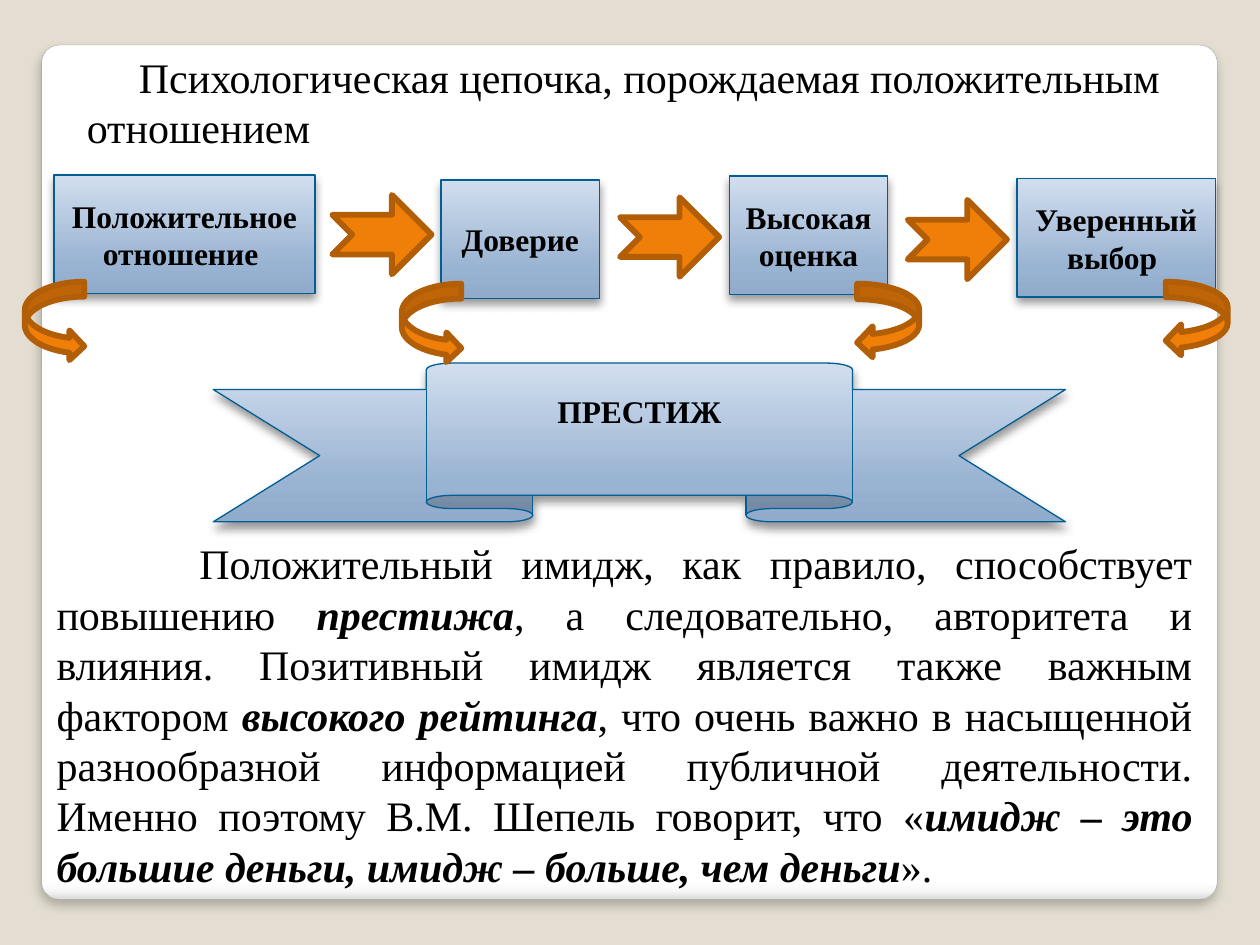
"""Build a slide on the chain that leads from a positive attitude to prestige."""
from pptx import Presentation
from pptx.dml.color import RGBColor
from pptx.enum.shapes import MSO_SHAPE as Shape
from pptx.enum.text import MSO_ANCHOR as Anchor, PP_ALIGN as Align
from pptx.oxml import parse_xml
from pptx.oxml.ns import nsdecls
from pptx.util import Cm, Pt

COLORS = {
    "page": "E3DED1", "panel_line": "A4A4A4", "text": "000000", "shadow": "000000",
    "blue_line": "035E94", "orange": "F07F09", "orange_line": "B25E07",
}
PANEL_STOPS = [(0, "FFFFFF"), (98, "FFFFFF"), (99, "F7F7F7"), (100, "DADADA")]
BLUE_STOPS = [(0, "90ABCB"), (25, "99B3D2"), (100, "D1DEEE")]
BLUE_STYLE = (BLUE_STOPS, 270, "blue_line", 0.75, (40, 5.2, 3))


def add_raised(kind, place, stops, angle, line, width, shadow):
    shape = page.shapes.add_shape(kind, *map(Cm, place))
    shape.line.color.rgb = RGBColor.from_string(COLORS[line])
    shape.line.width = Pt(width)
    shape.shadow.inherit = False
    marks = "".join(
        f'<a:gs pos="{spot * 1000}"><a:srgbClr val="{color}"/></a:gs>' for spot, color in stops)
    properties = shape._element.spPr
    properties.insert(2, parse_xml(
        f'<a:gradFill {nsdecls("a")} rotWithShape="1"><a:gsLst>{marks}</a:gsLst>'
        f'<a:lin ang="{angle * 60000}" scaled="0"/></a:gradFill>'))
    alpha, blur, distance = shadow
    properties[-1].append(parse_xml(
        f'<a:outerShdw {nsdecls("a")} blurRad="{Pt(blur)}" dist="{Pt(distance)}" '
        f'dir="5400000" rotWithShape="0"><a:srgbClr val="{COLORS["shadow"]}">'
        f'<a:alpha val="{alpha * 1000}"/></a:srgbClr></a:outerShdw>'))
    return shape


def write(shape, spans, size, align, italic=False):
    shape.text_frame.word_wrap = True
    para = shape.text_frame.paragraphs[0]
    para.alignment = align
    for words, strong in spans:
        span = para.add_run()
        span.text = words
        span.font.name = "Times New Roman"
        span.font.size = Pt(size)
        span.font.bold = strong
        span.font.italic = strong and italic
        span.font.color.rgb = RGBColor.from_string(COLORS["text"])
    return para


deck = Presentation()
deck.slide_width, deck.slide_height = Cm(25.4), Cm(19.05)
page = deck.slides.add_slide(deck.slide_layouts[6])
page.background.fill.solid()
page.background.fill.fore_color.rgb = RGBColor.from_string(COLORS["page"])

panel = add_raised(Shape.ROUNDED_RECTANGLE, (0.84, 0.91, 23.7, 17.22),
                   PANEL_STOPS, 90, "panel_line", 0.16, (25, 6, 4))
panel.adjustments[0] = 0.021

steps = [
    ("Положительное отношение ", 1.09, 3.53, 5.26),
    ("Доверие", 8.89, 3.63, 3.2),
    ("Высокая оценка", 14.7, 3.55, 3.2),
    ("Уверенный выбор ", 20.5, 3.6, 4),
]
for label, left, top, width in steps:
    box = add_raised(Shape.RECTANGLE, (left, top, width, 2.39), *BLUE_STYLE)
    box.text_frame.vertical_anchor = Anchor.MIDDLE
    write(box, [(label, True)], 18, Align.CENTER)

ribbon = add_raised(Shape.UP_RIBBON, (4.3, 7.32, 17.18, 3.2), *BLUE_STYLE)
ribbon.text_frame.vertical_anchor = Anchor.MIDDLE
ribbon.text_frame.margin_bottom = Cm(0.88)
write(ribbon, [("ПРЕСТИЖ", True)], 18, Align.CENTER)

arrows = [(Shape.NOTCHED_RIGHT_ARROW, 6.7 + 5.8 * index, 3.93 + 0.05 * index, 2, 1.6)
          for index in range(3)]
arrows += [
    (Shape.CURVED_RIGHT_ARROW, 0.5, 5.68, 1.2, 1.6),
    (Shape.CURVED_RIGHT_ARROW, 8.1, 5.72, 1.2, 1.6),
    (Shape.CURVED_LEFT_ARROW, 17.28, 5.72, 1.25, 1.5),
    (Shape.CURVED_LEFT_ARROW, 23.5, 5.68, 1.25, 1.5),
]
for kind, *place in arrows:
    arrow = page.shapes.add_shape(kind, *map(Cm, place))
    arrow.shadow.inherit = False
    arrow.fill.solid()
    arrow.fill.fore_color.rgb = RGBColor.from_string(COLORS["orange"])
    arrow.line.color.rgb = RGBColor.from_string(COLORS["orange_line"])
    arrow.line.width = Pt(3.35)

heading = [("Психологическая цепочка, порождаемая положительным отношением", False)]
summary = [
    ("Положительный имидж, как правило, способствует повышению ", False),
    ("престижа", True),
    (", а следовательно, авторитета и влияния. Позитивный имидж является также "
     "важным фактором ", False),
    ("высокого рейтинга", True),
    (", что очень важно в насыщенной разнообразной информацией публичной деятельности. "
     "Именно поэтому В.М. Шепель говорит, что «", False),
    ("имидж – это большие деньги, имидж – больше, чем деньги", True),
    ("».", False),
]
texts = [
    (heading, (1.5, 0.91, 22.43, 2.31), Align.LEFT, 1.05),
    (summary, (0.89, 10.72, 23.4, 7.44), Align.JUSTIFY, 2.88),
]
for spans, place, align, indent in texts:
    box = page.shapes.add_textbox(*map(Cm, place))
    para = write(box, spans, 24, align, italic=True)
    para._p.get_or_add_pPr().set("indent", str(Cm(indent)))

deck.save("out.pptx")
